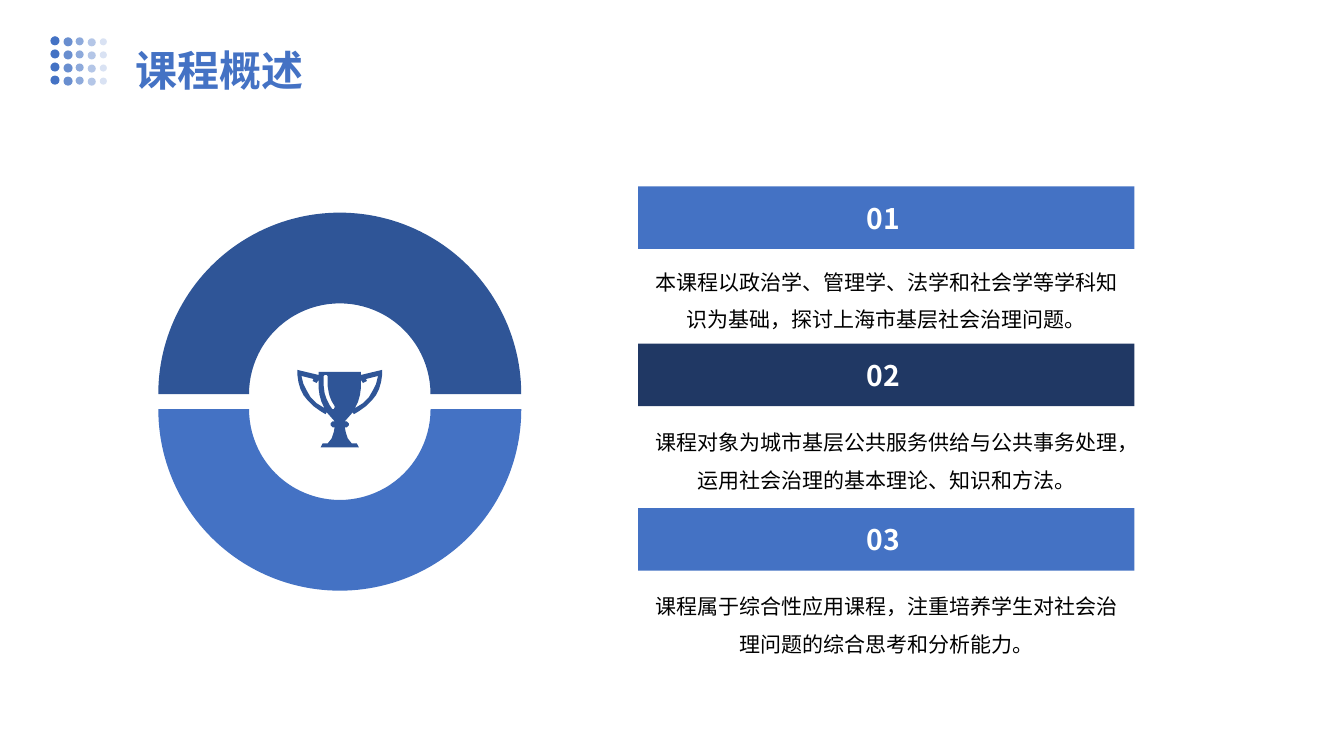
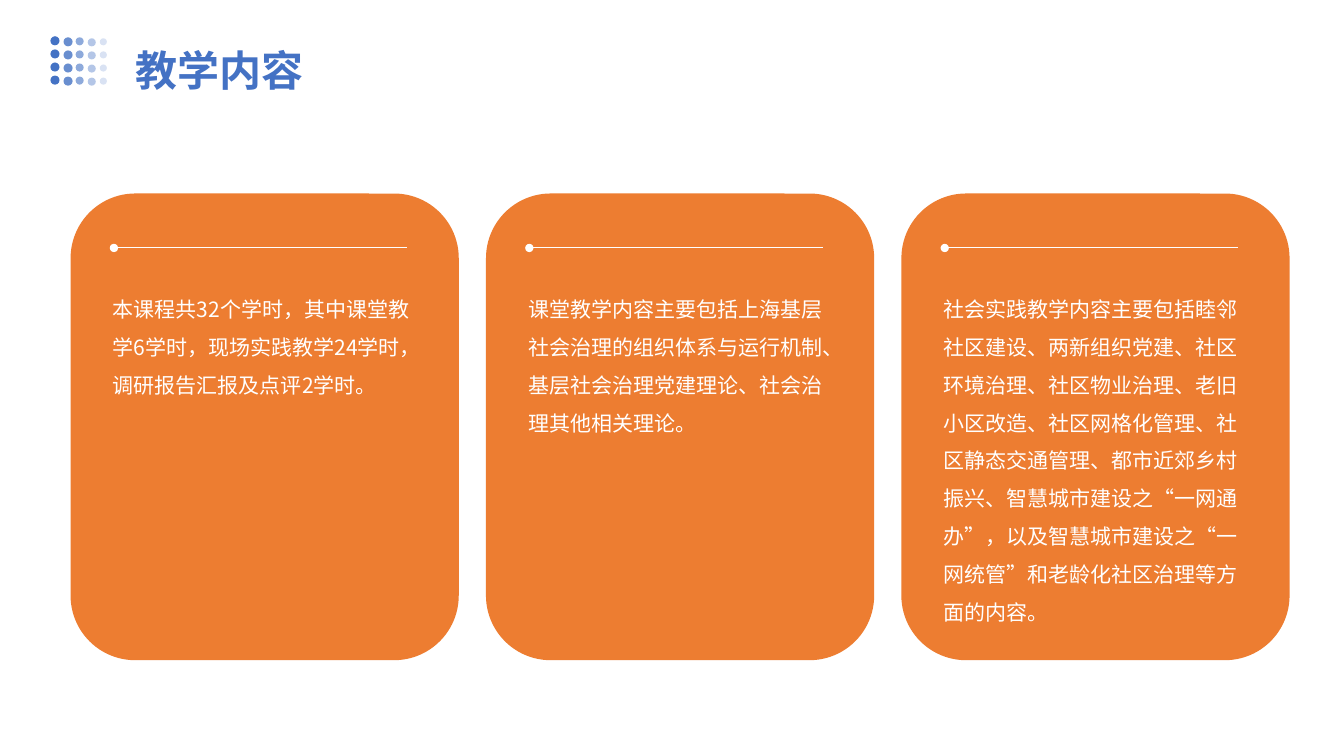
from dataclasses import dataclass

from lxml.etree import SubElement
from pptx import Presentation
from pptx.dml.color import RGBColor
from pptx.enum.shapes import MSO_CONNECTOR, MSO_SHAPE
from pptx.enum.text import MSO_ANCHOR, MSO_AUTO_SIZE, PP_ALIGN
from pptx.oxml.ns import qn
from pptx.shapes.autoshape import Shape
from pptx.slide import Slide
from pptx.text.text import TextFrame
from pptx.util import Inches, Pt

FONT = "Noto Sans CJK SC"
COLORS = {
    "blue": "4472C4",
    "deep_blue": "2F5597",
    "navy": "203864",
    "orange": "ED7D31",
    "white": "FFFFFF",
    "black": "000000",
}


@dataclass(frozen=True)
class Box:
    left: float
    top: float
    width: float
    height: float


@dataclass(frozen=True)
class TextStyle:
    size: float
    color: str
    bold: bool = False
    align: PP_ALIGN = PP_ALIGN.LEFT
    anchor: MSO_ANCHOR = MSO_ANCHOR.TOP
    line_spacing: float = 1.0
    space_before: float = 0
    insets: tuple[float, float, float, float] = (0.14, 0.14, 0.06, 0.14)
    grow: bool = False


@dataclass(frozen=True)
class DotColumn:
    left: float
    top: float
    size: float
    opacity: int


@dataclass(frozen=True)
class Topic:
    number: str
    bar_top: float
    text_top: float
    color: str
    text: str


TITLE = TextStyle(30, "blue", bold=True, line_spacing=1.4, grow=True)
CARD_TEXT = TextStyle(15, "white", line_spacing=1.5, grow=True)
TOPIC_TEXT = TextStyle(15, "black", align=PP_ALIGN.CENTER, anchor=MSO_ANCHOR.MIDDLE,
                       line_spacing=1.5, insets=(0.07, 0.04, 0.07, 0.04))
# The wider right inset moves the number slightly left of the bar's centre
TOPIC_NUMBER = TextStyle(20.2, "white", bold=True, align=PP_ALIGN.CENTER,
                         anchor=MSO_ANCHOR.MIDDLE, space_before=3.8,
                         insets=(0.1, 0.05, 0.16, 0.05))

DOT_ROWS = 4
DOT_PITCH = 0.13
DOT_COLUMNS = [
    DotColumn(0.5, 0.36, 0.09, 100),
    DotColumn(0.63, 0.37, 0.09, 80),
    DotColumn(0.75, 0.37, 0.08, 60),
    DotColumn(0.87, 0.38, 0.08, 40),
    DotColumn(0.99, 0.38, 0.07, 20),
]

TOPICS = [
    Topic("01", 1.85, 2.47, "blue",
          "本课程以政治学、管理学、法学和社会学等学科知识为基础，探讨上海市基层社会治理问题。"),
    Topic("02", 3.41, 4.06, "navy",
          "课程对象为城市基层公共服务供给与公共事务处理，运用社会治理的基本理论、知识和方法。"),
    Topic("03", 5.04, 5.69, "blue",
          "课程属于综合性应用课程，注重培养学生对社会治理问题的综合思考和分析能力。"),
]

CARD_TEXTS = [
    "本课程共32个学时，其中课堂教学6学时，现场实践教学24学时，调研报告汇报及点评2学时。",
    "课堂教学内容主要包括上海基层社会治理的组织体系与运行机制、基层社会治理党建理论、"
    "社会治理其他相关理论。",
    "社会实践教学内容主要包括睦邻社区建设、两新组织党建、社区环境治理、社区物业治理、"
    "老旧小区改造、社区网格化管理、社区静态交通管理、都市近郊乡村振兴、智慧城市建设之“一网通办”，"
    "以及智慧城市建设之“一网统管”和老龄化社区治理等方面的内容。",
]
CARD_LEFT = 0.7
CARD_PITCH = 4.12

# Trophy in hundredths of an inch: x is measured from its vertical axis
Points = list[tuple[int, int]]
TROPHY_AXIS = 337
TROPHY_HALF: Points = [
    (21, 369), (21, 372), (42, 367), (42, 372), (41, 379), (39, 386), (36, 392),
    (32, 397), (26, 403), (19, 408), (14, 411), (13, 409), (5, 418), (7, 418),
    (9, 420), (9, 422), (7, 424), (5, 424), (6, 429), (8, 435), (12, 440),
    (17, 440), (19, 444),
]
HANDLE_HOLE: Points = [
    (21, 377), (21, 385), (20, 392), (18, 399), (15, 405), (23, 400), (29, 394),
    (33, 387), (36, 381), (38, 373), (26, 376), (27, 378), (23, 380),
]
CUP_SHINE: Points = [
    (-16, 373), (-16, 382), (-15, 390), (-13, 396), (-10, 402), (-8, 405), (-7, 406),
    (-6, 406), (-5, 404), (-5, 403), (-8, 398), (-10, 393), (-11, 389), (-12, 383),
    (-12, 373), (-13, 372), (-15, 372),
]


def rgb(color: str) -> RGBColor:
    return RGBColor.from_string(COLORS[color])


def paint(shape: Shape, color: str, opacity: int = 100) -> None:
    shape.shadow.inherit = False
    shape.line.fill.background()
    shape.fill.solid()
    shape.fill.fore_color.rgb = rgb(color)
    if opacity < 100:
        color_element = shape.fill._xPr.find(qn("a:solidFill"))[0]
        SubElement(color_element, qn("a:alpha"), val=str(opacity * 1000))


def add_filled(slide: Slide, kind: MSO_SHAPE, box: Box, color: str,
               opacity: int = 100) -> Shape:
    shape = slide.shapes.add_shape(kind, Inches(box.left), Inches(box.top),
                                   Inches(box.width), Inches(box.height))
    paint(shape, color, opacity)
    return shape


def write_text(frame: TextFrame, text: str, style: TextStyle) -> None:
    frame.word_wrap = True
    frame.auto_size = MSO_AUTO_SIZE.SHAPE_TO_FIT_TEXT if style.grow else MSO_AUTO_SIZE.NONE
    frame.vertical_anchor = style.anchor
    (frame.margin_left, frame.margin_top,
     frame.margin_right, frame.margin_bottom) = map(Inches, style.insets)
    paragraph = frame.paragraphs[0]
    paragraph.alignment = style.align
    paragraph.line_spacing = style.line_spacing
    paragraph.space_before = Pt(style.space_before)
    run = paragraph.add_run()
    run.text = text
    run.font.size = Pt(style.size)
    run.font.bold = style.bold
    run.font.color.rgb = rgb(style.color)
    run.font.name = FONT
    SubElement(run.font._element, qn("a:ea"), typeface=FONT)


def add_text(slide: Slide, box: Box, text: str, style: TextStyle) -> None:
    text_box = slide.shapes.add_textbox(Inches(box.left), Inches(box.top),
                                        Inches(box.width), Inches(box.height))
    write_text(text_box.text_frame, text, style)


def add_titled_slide(presentation: Presentation, title: str) -> Slide:
    slide = presentation.slides.add_slide(presentation.slide_layouts[6])
    # Fading dot grid beside the title
    for row in range(DOT_ROWS):
        for dot in DOT_COLUMNS:
            box = Box(dot.left, dot.top + row * DOT_PITCH, dot.size, dot.size)
            add_filled(slide, MSO_SHAPE.OVAL, box, "blue", dot.opacity)
    add_text(slide, Box(1.2, 0.1, 10.94, 1), title, TITLE)
    return slide


def mirrored(points: Points) -> Points:
    return [(-x, y) for x, y in reversed(points)]


def add_trophy(slide: Slide) -> None:
    outlines = [TROPHY_HALF + mirrored(TROPHY_HALF), HANDLE_HOLE,
                mirrored(HANDLE_HOLE), CUP_SHINE]
    contours = [[(TROPHY_AXIS + x, y) for x, y in outline] for outline in outlines]
    builder = slide.shapes.build_freeform(*contours[0][0], scale=Inches(0.01))
    builder.add_line_segments(contours[0][1:], close=True)
    for contour in contours[1:]:
        builder.move_to(*contour[0])
        builder.add_line_segments(contour[1:], close=True)
    paint(builder.convert_to_shape(), "deep_blue")


def add_topic(slide: Slide, topic: Topic) -> None:
    bar = add_filled(slide, MSO_SHAPE.RECTANGLE, Box(6.33, topic.bar_top, 4.92, 0.62),
                     topic.color)
    write_text(bar.text_frame, topic.number, TOPIC_NUMBER)
    add_text(slide, Box(6.33, topic.text_top, 4.92, 0.9), topic.text, TOPIC_TEXT)


def add_dotted_rule(slide: Slide, left: float, top: float, width: float) -> None:
    rule = slide.shapes.add_connector(MSO_CONNECTOR.STRAIGHT, Inches(left), Inches(top),
                                      Inches(left + width), Inches(top))
    rule.line.color.rgb = rgb("white")
    rule.line.width = Pt(0.75)
    SubElement(rule.line._get_or_add_ln(), qn("a:headEnd"), type="oval")
    SubElement(rule._element.spPr, qn("a:effectLst"))


def add_card(slide: Slide, left: float, text: str) -> None:
    add_filled(slide, MSO_SHAPE.ROUNDED_RECTANGLE, Box(left, 1.92, 3.85, 4.63), "orange")
    add_dotted_rule(slide, left + 0.43, 2.46, 2.91)
    add_text(slide, Box(left + 0.28, 2.68, 3.28, 3.64), text, CARD_TEXT)


def build_overview(presentation: Presentation) -> None:
    slide = add_titled_slide(presentation, "课程概述")
    # Split ring around the trophy
    add_filled(slide, MSO_SHAPE.BLOCK_ARC, Box(1.57, 2.11, 3.6, 3.6), "deep_blue")
    lower_arc = add_filled(slide, MSO_SHAPE.BLOCK_ARC, Box(1.57, 2.26, 3.6, 3.6), "blue")
    lower_arc.rotation = 180
    add_trophy(slide)
    # Numbered topics
    for topic in TOPICS:
        add_topic(slide, topic)


def build_contents(presentation: Presentation) -> None:
    slide = add_titled_slide(presentation, "教学内容")
    for index, text in enumerate(CARD_TEXTS):
        add_card(slide, CARD_LEFT + index * CARD_PITCH, text)


def main() -> None:
    presentation = Presentation()
    presentation.slide_width = Inches(13.33)
    presentation.slide_height = Inches(7.5)
    build_overview(presentation)
    build_contents(presentation)
    presentation.save("out.pptx")


if __name__ == "__main__":
    main()
